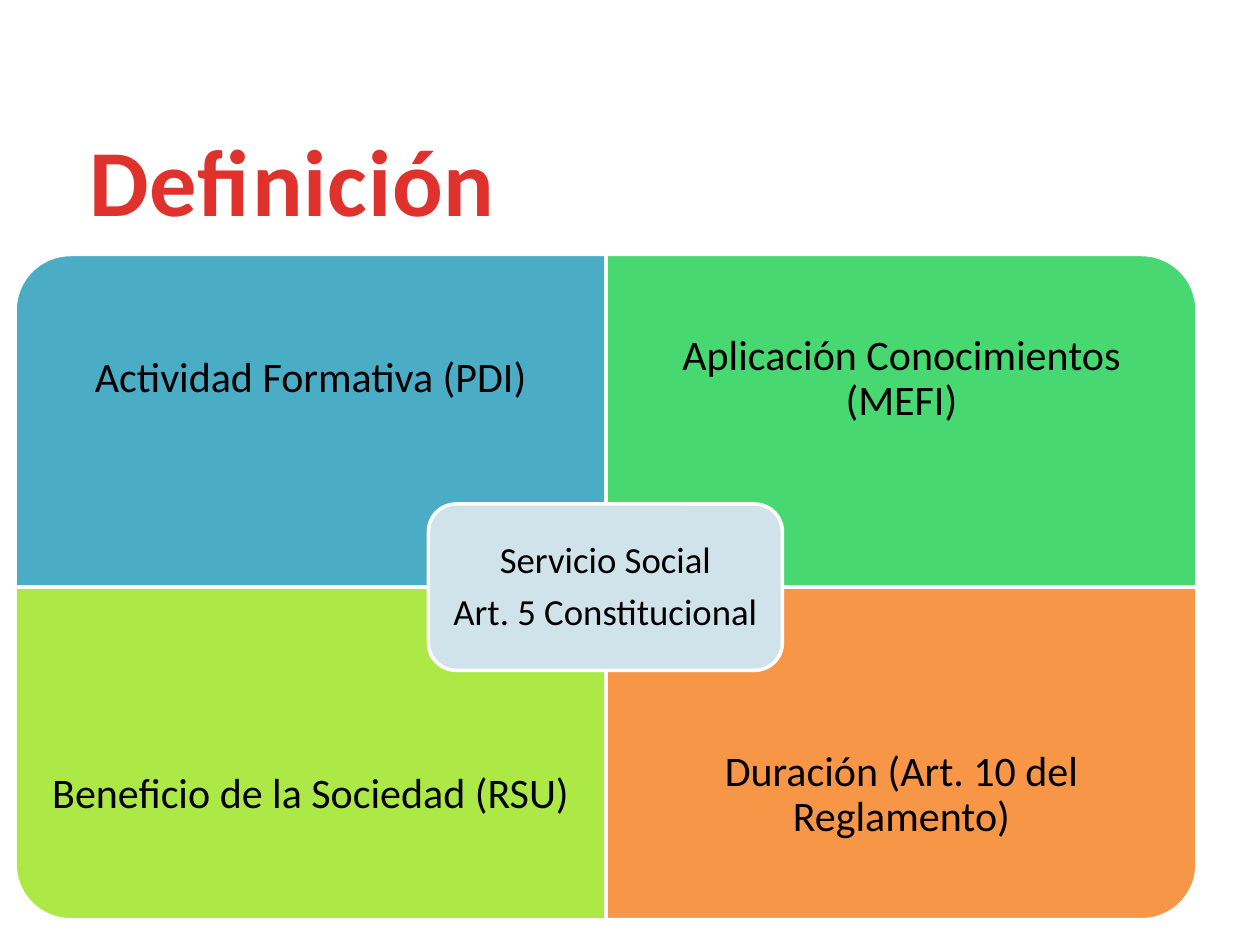
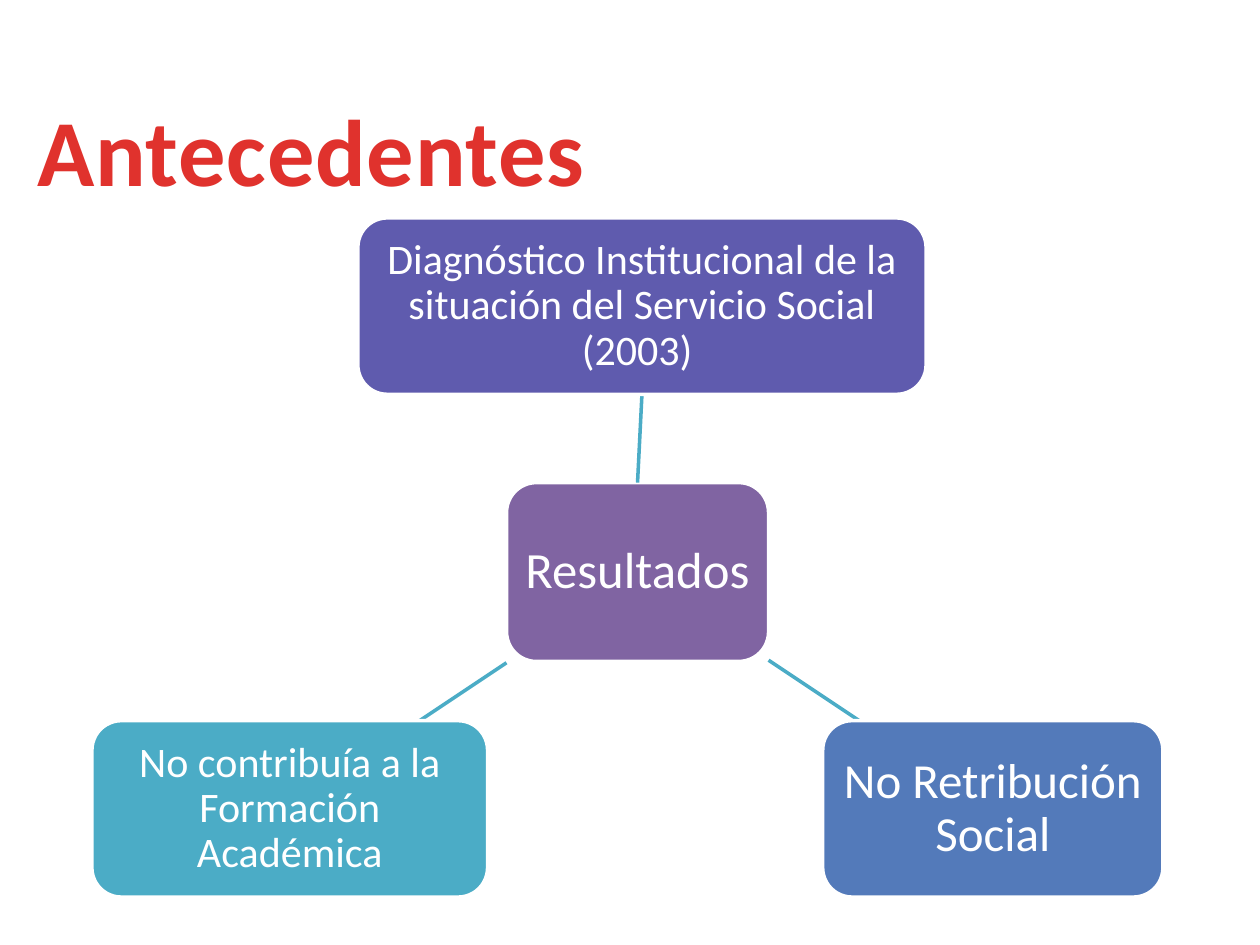
from dataclasses import dataclass

from lxml import etree
from pptx import Presentation
from pptx.dml.color import RGBColor
from pptx.enum.shapes import MSO_CONNECTOR as Connector, MSO_SHAPE as Shape
from pptx.enum.text import MSO_ANCHOR as Anchor, PP_ALIGN as Align
from pptx.oxml.ns import qn
from pptx.util import Inches, Pt


@dataclass(frozen=True)
class Theme:
    font: str = "Calibri"
    title: str = "E0322D"
    white: str = "FFFFFF"
    black: str = "000000"
    teal: str = "4BACC6"
    green: str = "47D872"
    lime: str = "ACE946"
    orange: str = "F79646"
    pale: str = "D0E3EA"
    purple: str = "8064A2"
    indigo: str = "5F5BAE"
    blue: str = "537ABA"
    title_size: int = 54
    hub_size: int = 29
    large_size: int = 28
    body_size: int = 24
    center_size: int = 21
    line_width: int = 2


THEME = Theme()


def color(value):
    return RGBColor.from_string(value)


def write_text(shape, text, size, text_color, inset=0.1, bold=False, wrap=True,
               anchor=Anchor.MIDDLE, line_spacing=0.9, letter_spacing=None):
    """Fill a shape with centred paragraphs, one per line of text."""
    frame = shape.text_frame
    frame.word_wrap = wrap
    frame.vertical_anchor = anchor
    frame.margin_left = frame.margin_right = Inches(inset)
    frame.margin_top = frame.margin_bottom = Inches(inset)
    for index, line in enumerate(text.split("\n")):
        paragraph = frame.add_paragraph() if index else frame.paragraphs[0]
        paragraph.alignment = Align.CENTER
        paragraph.line_spacing = line_spacing
        if index:
            paragraph.space_before = Pt(round(size * 0.35))
        run = paragraph.add_run()
        run.text = line
        run.font.name = THEME.font
        run.font.size = Pt(size)
        run.font.bold = bold
        run.font.color.rgb = color(text_color)
        if letter_spacing:
            run.font._element.set("spc", str(int(letter_spacing * 100)))


def add_text(slide, box, text, size, text_color, **text_format):
    shape = slide.shapes.add_textbox(*map(Inches, box))
    write_text(shape, text, size, text_color, **text_format)


def add_title(slide, left, top, width, text):
    add_text(slide, (left, top, width, 1.01), text, THEME.title_size, THEME.title,
             bold=True, wrap=False, inset=0.05, anchor=Anchor.TOP,
             line_spacing=1.0, letter_spacing=0.5)


def add_panel(slide, kind, box, fill):
    shape = slide.shapes.add_shape(kind, *map(Inches, box))
    shape.shadow.inherit = False
    shape.fill.solid()
    shape.fill.fore_color.rgb = color(fill)
    shape.line.color.rgb = color(THEME.white)
    shape.line.width = Pt(THEME.line_width)
    return shape


def add_node(slide, box, fill, text, size, text_color=THEME.white, inset=0.07):
    node = add_panel(slide, Shape.ROUNDED_RECTANGLE, box, fill)
    write_text(node, text, size, text_color, inset=inset)
    return node


def add_quadrant(slide, box, rotation, fill):
    """Add a panel whose single round corner is turned to face outwards."""
    left, top, width, height = box
    if rotation % 180:
        left, top = left + (width - height) / 2, top + (height - width) / 2
        width, height = height, width
    panel = add_panel(slide, Shape.ROUND_1_RECTANGLE, (left, top, width, height), fill)
    panel.rotation = rotation


def add_link(slide, start, end):
    link = slide.shapes.add_connector(Connector.STRAIGHT, *map(Inches, start + end))
    link.line.color.rgb = color(THEME.teal)
    link.line.width = Pt(THEME.line_width)
    etree.SubElement(link._element.spPr, qn("a:effectLst"))
    return link


def build_definition(slide):
    left, top, width, height = 0.12, 2.02, 4.69, 2.64
    text_height = height * 0.75
    quadrants = [
        ("Actividad Formativa (PDI)", THEME.teal, 270),
        ("Aplicación Conocimientos (MEFI)", THEME.green, 0),
        ("Beneficio de la Sociedad (RSU)", THEME.lime, 180),
        ("Duración (Art. 10 del Reglamento)", THEME.orange, 90),
    ]
    for index, (text, fill, rotation) in enumerate(quadrants):
        row, column = divmod(index, 2)
        x, y = left + column * width, top + row * height
        add_quadrant(slide, (x, y, width, height), rotation, fill)
        text_top = y + row * (height - text_height)
        add_text(slide, (x, text_top, width, text_height), text,
                 THEME.body_size, THEME.black, inset=0.19)
    add_node(slide, (3.4, 4, 2.81, 1.32), THEME.pale,
             "Servicio Social\nArt. 5 Constitucional",
             THEME.center_size, THEME.black, inset=0.09)
    add_title(slide, 0.59, 0.92, 3.46, "Definición")


def build_background(slide):
    add_title(slide, 0.17, 0.68, 4.6, "Antecedentes")
    results = add_node(slide, (4.02, 3.83, 2.08, 1.42), THEME.purple,
                       "Resultados", THEME.hub_size)
    diagnosis_link = add_link(slide, (5.06, 3.83), (5.1, 3.13))
    diagnosis = add_node(
        slide, (2.84, 1.73, 4.51, 1.4), THEME.indigo,
        "Diagnóstico Institucional de la situación del Servicio Social (2003) ",
        THEME.body_size)
    diagnosis_link.begin_connect(results, 0)
    diagnosis_link.end_connect(diagnosis, 2)

    add_link(slide, (6.1, 5.24), (6.82, 5.72))
    add_node(slide, (6.53, 5.72, 2.7, 1.4), THEME.blue,
             "No Retribución Social", THEME.large_size)
    add_link(slide, (4.02, 5.26), (3.33, 5.72))
    add_node(slide, (0.73, 5.72, 3.14, 1.4), THEME.teal,
             "No contribuía a la Formación Académica", THEME.body_size)


def main():
    presentation = Presentation()
    presentation.slide_width = Inches(10)
    presentation.slide_height = Inches(7.5)
    blank = presentation.slide_layouts[6]
    for build in (build_definition, build_background):
        build(presentation.slides.add_slide(blank))
    presentation.save("out.pptx")


if __name__ == "__main__":
    main()
